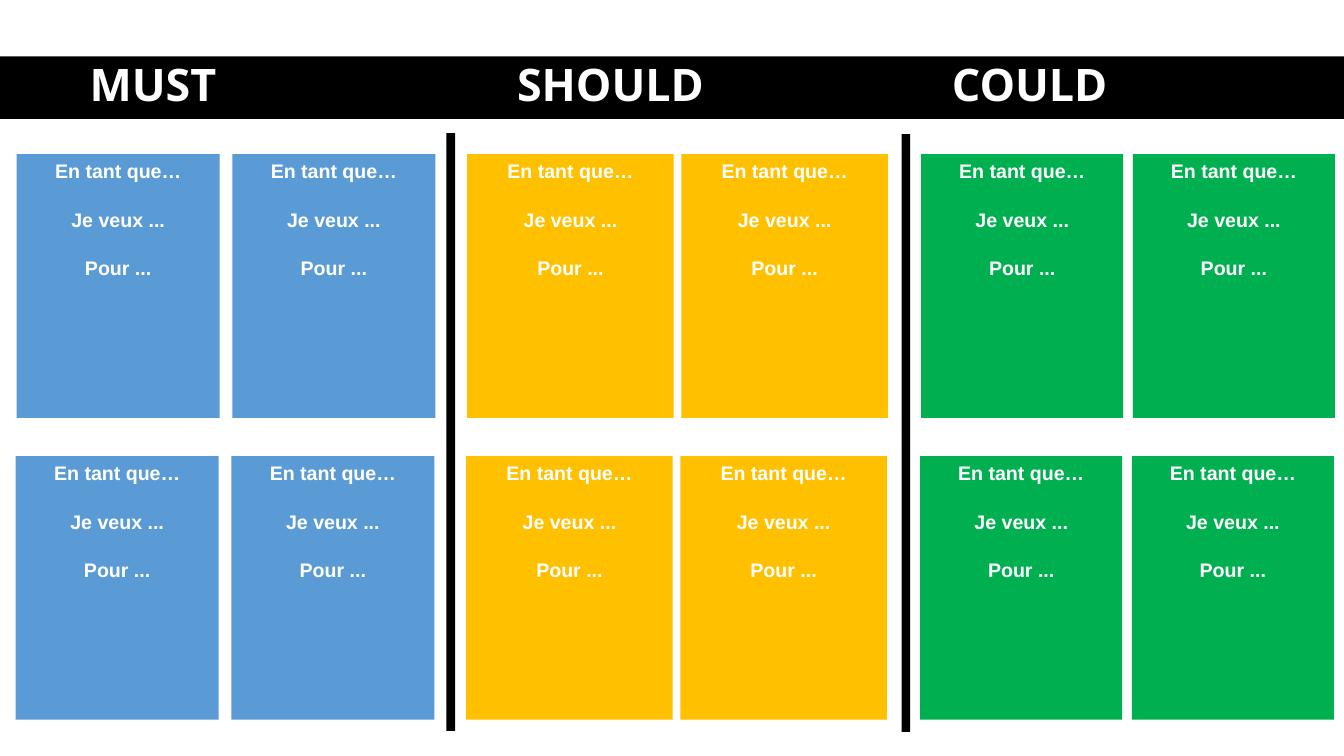
from itertools import product

from lxml.etree import SubElement
from pptx import Presentation
from pptx.dml.color import RGBColor
from pptx.enum.shapes import MSO_SHAPE as Preset
from pptx.enum.text import MSO_ANCHOR as Anchor, PP_ALIGN as Align
from pptx.oxml.ns import qn
from pptx.util import Inches, Pt

BLACK = RGBColor(0x00, 0x00, 0x00)
WHITE = RGBColor(0xFF, 0xFF, 0xFF)
BLUE = RGBColor(0x5B, 0x9B, 0xD5)
AMBER = RGBColor(0xFF, 0xC0, 0x00)
GREEN = RGBColor(0x00, 0xB0, 0x50)

SLIDE_WIDTH, SLIDE_HEIGHT = 26.67, 15
BANNER_TOP, BANNER_HEIGHT = 1.12, 1.24
PRIORITIES = ["MUST", "SHOULD", "COULD"]
PRIORITY_LEFTS = [1.78, 10.26, 18.89]
DIVIDERS = [(8.86, 2.64), (17.89, 2.66)]
COLUMNS = [
    (0.33, 4.28, 4.03, BLUE),
    (9.27, 4.25, 4.1, AMBER),
    (18.28, 4.2, 4.01, GREEN),
]
ROWS = [(3.06, 0), (9.05, -0.02)]
CARD_HEIGHT, STORY_HEIGHT = 5.23, 2.41
USER_STORY = ["En tant que…", "Je veux ...", "Pour ..."]


class Board:
    heading_font = {"name": "Open Sans", "size": Pt(64), "bold": True}
    story_font = {"name": "Arial", "size": Pt(28), "bold": True}
    story_gap = Pt(35.5)

    def __init__(self, slide):
        self.slide = slide

    def block(self, shapes, left, top, width, height, color):
        block = shapes.add_shape(
            Preset.RECTANGLE, Inches(left), Inches(top), Inches(width), Inches(height)
        )
        block.shadow.inherit = False
        block.fill.solid()
        block.fill.fore_color.rgb = color
        block.line.fill.background()

    def text(self, shapes, left, top, width, height, lines, font, margins, align):
        frame = shapes.add_textbox(
            Inches(left), Inches(top), Inches(width), Inches(height)
        ).text_frame
        frame.word_wrap = True
        frame.vertical_anchor = Anchor.TOP
        for side, margin in zip(("left", "top", "right", "bottom"), margins):
            setattr(frame, f"margin_{side}", Inches(margin))
        for index, line in enumerate(lines):
            paragraph = frame.add_paragraph() if index else frame.paragraphs[0]
            paragraph.alignment = align
            if index:
                paragraph.space_before = self.story_gap
            run = paragraph.add_run()
            run.text = line
            run.font.color.rgb = WHITE
            for name, value in font.items():
                setattr(run.font, name, value)
        return frame

    def banner(self):
        shapes = self.slide.shapes.add_group_shape().shapes
        area = (0, BANNER_TOP, SLIDE_WIDTH, BANNER_HEIGHT)
        self.block(shapes, *area, BLACK)
        start, *stops = PRIORITY_LEFTS
        frame = self.text(
            shapes, *area, ["\t".join(PRIORITIES)],
            self.heading_font, (start, 0, 0, 0), Align.LEFT,
        )
        properties = frame.paragraphs[0]._p.get_or_add_pPr()
        tabs = SubElement(properties, qn("a:tabLst"))
        for stop in stops:
            SubElement(tabs, qn("a:tab"), pos=str(Inches(stop - start)), algn="l")

    def divider(self, left, top):
        self.block(self.slide.shapes, left, top, 0.17, 11.86, BLACK)

    def card(self, left, top, width, color):
        shapes = self.slide.shapes.add_group_shape().shapes
        self.block(shapes, left, top, width, CARD_HEIGHT, color)
        self.text(
            shapes, left, top, width, STORY_HEIGHT, USER_STORY,
            self.story_font, (0.1,) * 4, Align.CENTER,
        )


def main():
    deck = Presentation()
    deck.slide_width = Inches(SLIDE_WIDTH)
    deck.slide_height = Inches(SLIDE_HEIGHT)
    board = Board(deck.slides.add_slide(deck.slide_layouts[6]))
    for left, top in DIVIDERS:
        board.divider(left, top)
    board.banner()
    for (top, shift), (left, pitch, width, color), place in product(
        ROWS, COLUMNS, range(2)
    ):
        board.card(left + shift + place * pitch, top, width, color)
    deck.save("out.pptx")


if __name__ == "__main__":
    main()
